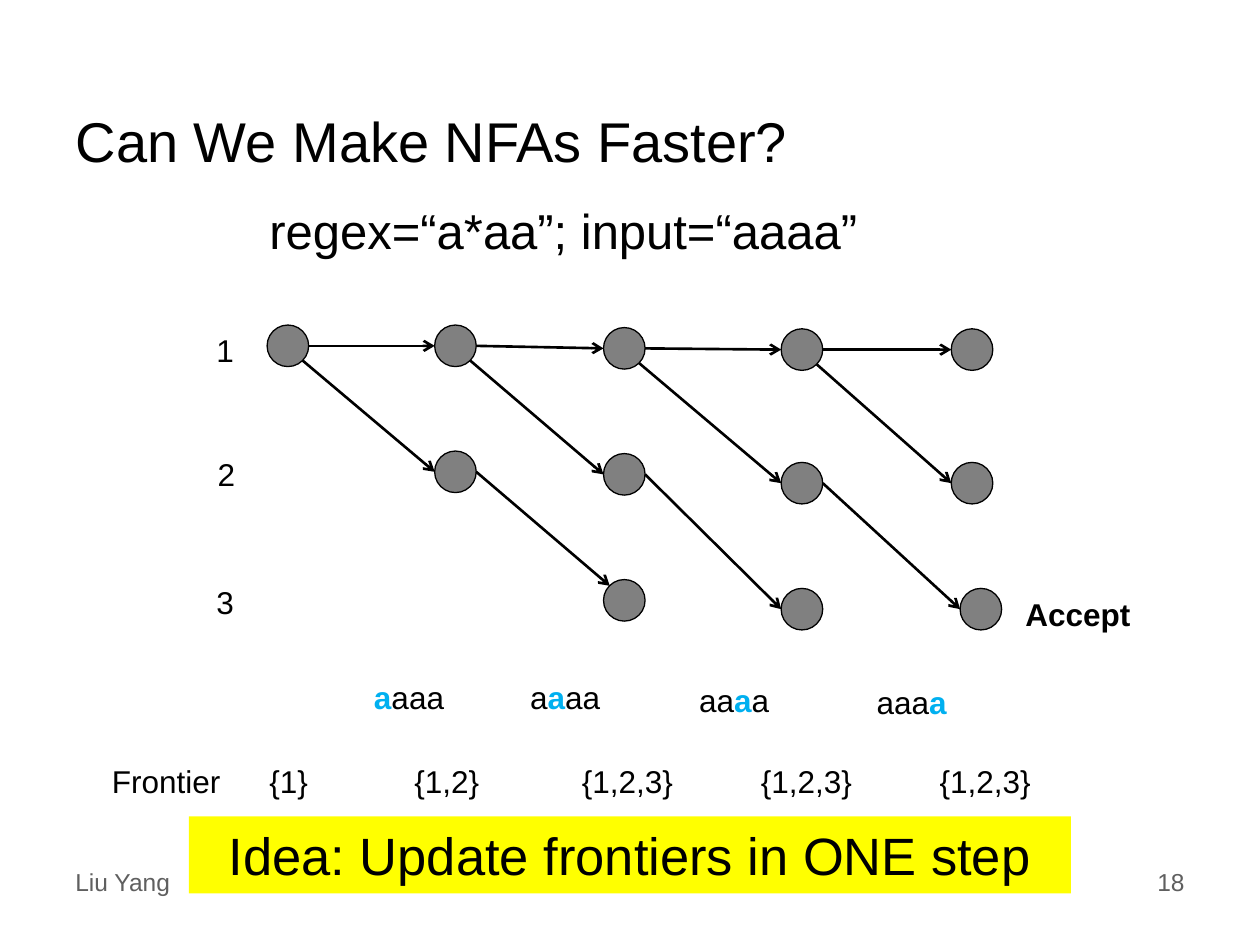
"""Build a slide that traces NFA frontiers for the regex a*aa."""
import lxml.etree
import pptx
import pptx.dml.color
import pptx.enum.shapes
import pptx.enum.text
import pptx.oxml.ns
import pptx.util

Inches = pptx.util.Inches
Alignment = pptx.enum.text.PP_ALIGN
Anchor = pptx.enum.text.MSO_ANCHOR
Preset = pptx.enum.shapes.MSO_SHAPE

BLACK = pptx.dml.color.RGBColor(0x00, 0x00, 0x00)
GRAY = pptx.dml.color.RGBColor(0x80, 0x80, 0x80)
FOOTER_GRAY = pptx.dml.color.RGBColor(0x5F, 0x5F, 0x5F)
BLUE = pptx.dml.color.RGBColor(0x00, 0xB0, 0xF0)
YELLOW = pptx.dml.color.RGBColor(0xFF, 0xFF, 0x00)

FONT = "Arial"
DIAMETER = 0.33
STATE_LABELS = [("1", 1.62, 2.58), ("2", 1.63, 3.56), ("3", 1.62, 4.58)]
STEPS = [
    [(2.12, 2.58)],
    [(3.45, 2.58), (3.45, 3.58)],
    [(4.79, 2.6), (4.79, 3.6), (4.79, 4.6)],
    [(6.2, 2.61), (6.2, 3.67), (6.2, 4.67)],
    [(7.55, 2.61), (7.55, 3.67), (7.62, 4.67)],
]
INPUT_BOXES = [(2.87, 5.33, 0.8), (4.11, 5.33, 0.76), (5.45, 5.36, 0.76), (6.86, 5.37, 0.76)]
FRONTIERS = [
    ("Frontier", 0.79, 1.07),
    ("{1}", 2.04, 0.51),
    ("{1,2}", 3.19, 0.72),
    ("{1,2,3}", 4.52, 0.93),
    ("{1,2,3}", 5.94, 0.93),
    ("{1,2,3}", 7.36, 0.93),
]
SITES = {"right": (1, 0.5), "left": (0, 0.5), "lower right": (0.85, 0.85), "upper left": (0.15, 0.15)}


def add_run(paragraph, text, size, color=BLACK, bold=False):
    """Append one formatted run to a paragraph."""
    run = paragraph.add_run()
    run.text = text
    run.font.name = FONT
    run.font.size = pptx.util.Pt(size)
    run.font.bold = bold
    run.font.color.rgb = color


def add_text(slide, box, runs, size=18, wrap=False, alignment=Alignment.LEFT):
    """Add a text box holding one paragraph of (text, color, bold) runs."""
    shape = slide.shapes.add_textbox(*map(Inches, box))
    shape.text_frame.word_wrap = wrap
    paragraph = shape.text_frame.paragraphs[0]
    paragraph.alignment = alignment
    for text, color, bold in runs:
        add_run(paragraph, text, size, color, bold)


def add_filled_shape(slide, preset, box, color):
    """Add a preset shape with a solid fill, no shadow and no line."""
    shape = slide.shapes.add_shape(preset, *map(Inches, box))
    shape.shadow.inherit = False
    shape.fill.solid()
    shape.fill.fore_color.rgb = color
    shape.line.fill.background()
    return shape


def add_state(slide, position):
    """Add one outlined NFA state circle."""
    circle = add_filled_shape(slide, Preset.FLOWCHART_CONNECTOR, (*position, DIAMETER, DIAMETER), GRAY)
    circle.line.color.rgb = BLACK
    circle.line.width = pptx.util.Pt(0.75)


def site_point(position, site):
    """Return the point of a named site on a state circle."""
    return [Inches(start + share * DIAMETER) for start, share in zip(position, SITES[site])]


def add_transition(slide, source, source_site, target, target_site="left"):
    """Add an arrow between sites on two state circles."""
    connector = slide.shapes.add_connector(
        pptx.enum.shapes.MSO_CONNECTOR.STRAIGHT,
        *site_point(source, source_site),
        *site_point(target, target_site),
    )
    connector.line.color.rgb = BLACK
    connector.line.width = pptx.util.Pt(1.5)
    qualified = pptx.oxml.ns.qn
    line = connector.line._get_or_add_ln()
    lxml.etree.SubElement(line, qualified("a:tailEnd"), type="arrow")
    lxml.etree.SubElement(connector._element.spPr, qualified("a:effectLst"))


def add_automaton(slide):
    """Add the states of every step and the transitions between steps."""
    for step in STEPS:
        for position in step:
            add_state(slide, position)
    for index, (current, following) in enumerate(zip(STEPS, STEPS[1:])):
        add_transition(slide, current[0], "right", following[0])
        add_transition(slide, current[0], "lower right", following[1])
        if len(current) > 1:
            target_site = "upper left" if index == 1 else "left"
            add_transition(slide, current[1], "right", following[2], target_site)


def add_labels(slide):
    """Add state numbers, consumed inputs and frontier sets."""
    for text, left, top in STATE_LABELS:
        add_text(slide, (left, top, 0.34, 0.38), [(text, BLACK, False)])
    for index, (left, top, width) in enumerate(INPUT_BOXES):
        parts = [("a" * index, BLACK, False), ("a", BLUE, True), ("a" * (3 - index), BLACK, False)]
        add_text(slide, (left, top, width, 0.4), [part for part in parts if part[0]])
    for text, left, width in FRONTIERS:
        add_text(slide, (left, 6, width, 0.38), [(text, BLACK, False)])
    add_text(slide, (8.04, 4.67, 1.17, 0.4), [("Accept", BLACK, True)], wrap=True)


def add_title(slide, text):
    """Place and fill the title placeholder."""
    title = slide.shapes.title
    title.left, title.top, title.width, title.height = map(Inches, (0.5, 0.67, 9, 0.88))
    title.text_frame.vertical_anchor = Anchor.MIDDLE
    paragraph = title.text_frame.paragraphs[0]
    paragraph.alignment = Alignment.LEFT
    add_run(paragraph, text, 32)


def add_banner(slide, text):
    """Add the highlighted conclusion."""
    banner = add_filled_shape(slide, Preset.RECTANGLE, (1.5, 6.48, 7, 0.61), YELLOW)
    banner.text_frame.word_wrap = True
    banner.text_frame.vertical_anchor = Anchor.TOP
    paragraph = banner.text_frame.paragraphs[0]
    paragraph.alignment = Alignment.CENTER
    add_run(paragraph, text, 30)


def main():
    """Create and save the presentation."""
    presentation = pptx.Presentation()
    presentation.slide_width = Inches(10)
    presentation.slide_height = Inches(7.5)
    slide = presentation.slides.add_slide(presentation.slide_layouts[5])
    add_text(slide, (0.5, 6.83, 2.5, 0.33), [("Liu Yang", FOOTER_GRAY, False)], 14, True)
    add_title(slide, "Can We Make NFAs Faster?")
    add_automaton(slide)
    add_labels(slide)
    add_banner(slide, "Idea: Update frontiers in ONE step")
    add_text(slide, (2.04, 1.54, 4.93, 0.57), [("regex=“a*aa”; input=“aaaa”", BLACK, False)], 28)
    add_text(slide, (7.17, 6.83, 2.33, 0.52), [("18", FOOTER_GRAY, False)], 14, True, Alignment.RIGHT)
    presentation.save("out.pptx")


if __name__ == "__main__":
    main()
